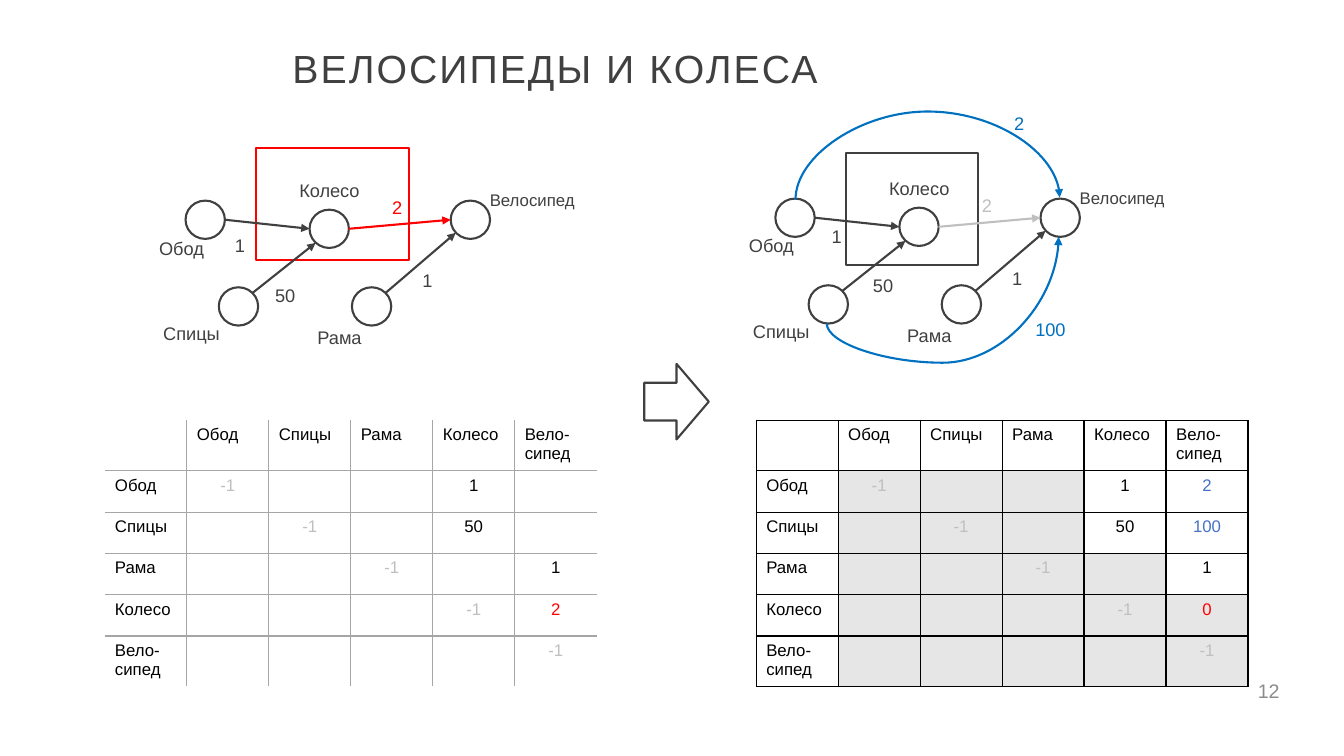
from lxml import etree
from pptx import Presentation
from pptx.dml.color import RGBColor
from pptx.enum import shapes, text
from pptx.oxml.ns import qn
from pptx.util import Inches, Pt

# Colours
DARK = RGBColor(0x40, 0x40, 0x40)
BLACK = RGBColor(0, 0, 0)
WHITE = RGBColor(0xFF, 0xFF, 0xFF)
RED = RGBColor(0xFF, 0, 0)
BLUE = RGBColor(0, 0x70, 0xC0)
CELL_BLUE = RGBColor(0x44, 0x72, 0xC4)
PALE = RGBColor(0xBF, 0xBF, 0xBF)
GRID_GREY = RGBColor(0xA6, 0xA6, 0xA6)
SHADE = RGBColor(0xE7, 0xE6, 0xE6)
NUMBER_GREY = RGBColor(0x8C, 0x8C, 0x8C)

# Content
TITLE = "ВЕЛОСИПЕДЫ И КОЛЕСА"
PAGE_NUMBER = "12"
PARTS = ["Обод", "Спицы", "Рама", "Колесо", "Вело-сипед"]

# Graph nodes: left, top
NODE_SIZE = (0.39, 0.38)
NODES = [(2.17, 2.85), (3.07, 2.08), (1.84, 1.99), (4.47, 1.99), (3.49, 2.85)]
# Arrows: start, end
ARROWS = [((2.5, 2.91), (3.13, 2.41)), ((2.23, 2.18), (3.07, 2.27)),
          ((3.82, 2.91), (4.52, 2.31))]
WHEEL_ARROW = ((3.46, 2.27), (4.47, 2.18))
# Labels: text, left, top, width, size
NODE_LABELS = [("Обод", 1.48, 2.3, 0.73, 13), ("Спицы", 1.52, 3.15, 0.83, 13),
               ("Колесо", 2.87, 1.73, 0.83, 13), ("Рама", 3.05, 3.19, 0.83, 13),
               ("Велосипед", 4.76, 1.83, 1.07, 12), ("1", 4.09, 2.62, 0.48, 13)]
WHEEL_LABEL = ("2", 3.79, 1.9, 0.48, 13)

# Graphs: shift from the left graph, frame, colours, labels with their own place
GRAPHS = [
    {"shift": (0, 0), "frame": (2.54, 1.47, 1.52, 1.11), "frame_color": RED,
     "wheel_color": RED,
     "labels": [("1", 2.23, 2.27, 0.48, DARK), ("50", 2.63, 2.77, 0.48, DARK)]},
    {"shift": (5.85, -0.02), "frame": (8.39, 1.52, 1.31, 1.11), "frame_color": DARK,
     "wheel_color": PALE,
     "labels": [("1", 8.15, 2.19, 0.3, DARK), ("50", 8.56, 2.67, 0.48, DARK),
                ("100", 10.17, 3.11, 0.53, BLUE), ("2", 9.96, 1.06, 0.53, BLUE)]},
]
# Curves: start, end, height of the far side
CURVES = [((8.2, 3.21), (10.5, 2.35), 3.6), ((7.89, 1.98), (10.51, 1.96), 1.11)]

# Tables: values by (row, column), colour of each coloured value
TABLES = [
    {"left": 1.04, "border": GRID_GREY, "framed": False, "white_cells": None,
     "values": {(1, 4): ("1", BLACK), (2, 4): ("50", BLACK),
                (3, 5): ("1", BLACK), (4, 5): ("2", RED)}},
    {"left": 7.5, "border": BLACK, "framed": True,
     "white_cells": {(1, 4), (1, 5), (2, 4), (2, 5), (3, 5)},
     "values": {(1, 4): ("1", BLACK), (1, 5): ("2", CELL_BLUE),
                (2, 4): ("50", BLACK), (2, 5): ("100", CELL_BLUE),
                (3, 5): ("1", BLACK), (4, 5): ("0", RED)}},
]
TABLE_TOP, TABLE_WIDTH, ROW_HEIGHT = 4.17, 4.88, 0.41
COUNT = len(PARTS) + 1

presentation = Presentation()
presentation.slide_width, presentation.slide_height = Inches(13.33), Inches(7.5)
slide = presentation.slides.add_slide(presentation.slide_layouts[5])


def write(paragraph, words, size, color, align=text.PP_ALIGN.LEFT):
    run = paragraph.add_run()
    run.text = words
    paragraph.alignment = align
    for name, value in {"name": "Arial", "size": Pt(size), "bold": False}.items():
        setattr(run.font, name, value)
    run.font.color.rgb = color
    return run


def add_label(words, left, top, width, size, color, height=0.32, align=text.PP_ALIGN.LEFT,
              anchor=text.MSO_ANCHOR.TOP):
    box = slide.shapes.add_textbox(Inches(left), Inches(top), Inches(width), Inches(height))
    for name, value in {"word_wrap": True, "vertical_anchor": anchor}.items():
        setattr(box.text_frame, name, value)
    write(box.text_frame.paragraphs[0], words, size, color, align)


def add_outline(kind, left, top, width, height, color=DARK):
    shape = slide.shapes.add_shape(kind, Inches(left), Inches(top), Inches(width), Inches(height))
    shape.shadow.inherit = False
    shape.fill.solid()
    shape.fill.fore_color.rgb = WHITE
    shape.line.color.rgb = color
    shape.line.width = Pt(1.5)


def add_arrow(start, end, color, kind=shapes.MSO_CONNECTOR.STRAIGHT):
    connector = slide.shapes.add_connector(kind, *(Inches(value) for value in (*start, *end)))
    connector.line.color.rgb = color
    connector.line.width = Pt(1.5)
    properties = connector._element.spPr
    etree.SubElement(properties.find(qn("a:ln")), qn("a:tailEnd"), type="triangle")
    etree.SubElement(properties, qn("a:effectLst"))
    return properties


def add_curve(start, end, far_side):
    """A curve that leaves and arrives vertically: a connector turned by 90 degrees."""
    width, height = start[1] - end[1], end[0] - start[0]
    left = (start[0] + end[0] - width) / 2
    top = (start[1] + end[1] - height) / 2
    properties = add_arrow((left, top), (left + width, top + height), BLUE,
                           shapes.MSO_CONNECTOR.CURVE)
    for name, value in {"rot": "5400000", "flipH": "1", "flipV": "1"}.items():
        properties.find(qn("a:xfrm")).set(name, value)
    bend = round((start[1] - far_side) / width * 100000)
    adjustments = properties.find(qn("a:prstGeom")).get_or_add_avLst()
    etree.SubElement(adjustments, qn("a:gd"), name="adj1", fmla=f"val {bend}")


def set_borders(cell, color, visible):
    properties = cell._tc.get_or_add_tcPr()
    for side, shown in visible.items():
        line = etree.SubElement(properties, qn(f"a:ln{side}"), w=str(Pt(1)))
        fill = etree.SubElement(line, qn("a:solidFill" if shown else "a:noFill"))
        if shown:
            etree.SubElement(fill, qn("a:srgbClr"), val=str(color))


def add_matrix(left, border, framed, white_cells, values):
    table = slide.shapes.add_table(COUNT, COUNT, Inches(left), Inches(TABLE_TOP),
                                   Inches(TABLE_WIDTH), Inches(ROW_HEIGHT * COUNT)).table
    table.first_row = table.horz_banding = False
    last = COUNT - 1
    for row in range(COUNT):
        for column in range(COUNT):
            cell = table.cell(row, column)
            set_borders(cell, border, {"L": framed or column > 0, "R": framed or column < last,
                                       "T": framed or row > 0, "B": framed or row < last})
            inner = row > 0 and column > 0
            if white_cells and inner and (row, column) not in white_cells:
                cell.fill.solid()
                cell.fill.fore_color.rgb = SHADE
            else:
                cell.fill.background()
            paragraph = cell.text_frame.paragraphs[0]
            paragraph.font.size = Pt(12)
            if inner:
                diagonal = ("-1", PALE) if row == column else None
                value = values.get((row, column), diagonal)
                if value:
                    write(paragraph, value[0], 12, value[1], text.PP_ALIGN.CENTER)
            elif row or column:
                write(paragraph, PARTS[max(row, column) - 1], 12, BLACK)


# Title
title = slide.shapes.title
for name, value in {"left": 2.8, "top": 0.3, "width": 7.71, "height": 0.66}.items():
    setattr(title, name, Inches(value))
for name, value in {"auto_size": text.MSO_AUTO_SIZE.NONE, "word_wrap": True,
                    "vertical_anchor": text.MSO_ANCHOR.BOTTOM}.items():
    setattr(title.text_frame, name, value)
heading = title.text_frame.paragraphs[0]
heading.line_spacing = 0.9
write(heading, TITLE, 28, DARK)._r.get_or_add_rPr().set("spc", "150")

# Graphs
for graph in GRAPHS:
    dx, dy = graph["shift"]
    add_outline(shapes.MSO_SHAPE.RECTANGLE, *graph["frame"], graph["frame_color"])
    for x, y in NODES:
        add_outline(shapes.MSO_SHAPE.FLOWCHART_CONNECTOR, x + dx, y + dy, *NODE_SIZE)
    colored_arrows = [(arrow, DARK) for arrow in ARROWS] + [(WHEEL_ARROW, graph["wheel_color"])]
    for ends, color in colored_arrows:
        add_arrow(*((x + dx, y + dy) for x, y in ends), color)
    colored_labels = [(label, DARK) for label in NODE_LABELS] + [(WHEEL_LABEL, graph["wheel_color"])]
    for (words, x, y, width, size), color in colored_labels:
        add_label(words, x + dx, y + dy, width, size, color)
    for words, x, y, width, color in graph["labels"]:
        add_label(words, x, y, width, 13, color)
for curve in CURVES:
    add_curve(*curve)

# Step arrow, tables and page number
add_outline(shapes.MSO_SHAPE.RIGHT_ARROW, 6.39, 3.61, 0.64, 0.75)
for matrix in TABLES:
    add_matrix(**matrix)
add_label(PAGE_NUMBER, 9.79, 6.65, 3, 14, NUMBER_GREY, 0.4, text.PP_ALIGN.RIGHT,
          text.MSO_ANCHOR.MIDDLE)

presentation.save("out.pptx")
